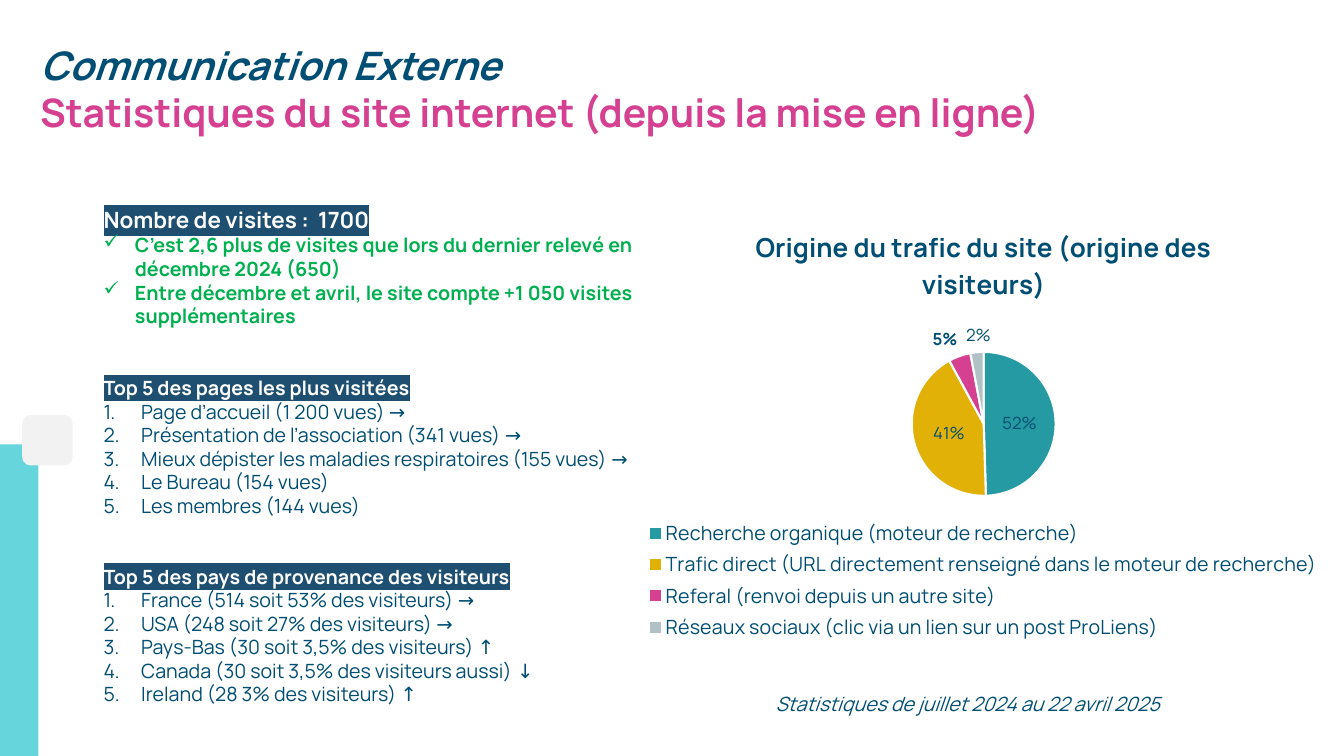
from dataclasses import dataclass

from lxml import etree
from pptx import Presentation
from pptx.chart.data import CategoryChartData
from pptx.dml.color import RGBColor
from pptx.enum.chart import XL_CHART_TYPE, XL_LABEL_POSITION, XL_LEGEND_POSITION
from pptx.enum.shapes import MSO_SHAPE
from pptx.enum.text import MSO_AUTO_SIZE, PP_ALIGN
from pptx.oxml import parse_xml
from pptx.oxml.ns import nsdecls, qn
from pptx.util import Cm, Pt

PIE = XL_CHART_TYPE.PIE
LEGEND_BOTTOM = XL_LEGEND_POSITION.BOTTOM
LABEL_CENTER = XL_LABEL_POSITION.CENTER
LABEL_OUTSIDE = XL_LABEL_POSITION.OUTSIDE_END
ROUNDED = MSO_SHAPE.ROUNDED_RECTANGLE
ONE_ROUND_CORNER = MSO_SHAPE.ROUND_1_RECTANGLE
FIT_SHAPE = MSO_AUTO_SIZE.SHAPE_TO_FIT_TEXT
LEFT, RIGHT, JUSTIFY = PP_ALIGN.LEFT, PP_ALIGN.RIGHT, PP_ALIGN.JUSTIFY


@dataclass(frozen=True)
class Theme:
    navy: str = "004E73"
    pink: str = "D54190"
    green: str = "00B050"
    white: str = "FFFFFF"
    highlight: str = "1E4F71"
    aqua: str = "67D5DC"
    pale: str = "F2F2F2"
    teal: str = "259AA2"
    gold: str = "E1B107"
    silver: str = "B1C2C7"
    text_font: str = "Manrope"
    arrow_font: str = "Karla"
    chart_font: str = "Lato"
    title_size: float = 28
    chart_title_size: float = 18.6
    heading_size: float = 16
    body_size: float = 14
    label_size: float = 12
    chart_size: float = 10


@dataclass(frozen=True)
class Box:
    left: float
    top: float
    width: float
    height: float

    def lengths(self):
        return Cm(self.left), Cm(self.top), Cm(self.width), Cm(self.height)


@dataclass(frozen=True)
class Entry:
    text: str
    arrow: str = ""


@dataclass(frozen=True)
class Block:
    box: Box
    heading: str
    heading_size: float
    entries: tuple
    color: str
    bold: bool
    bullet: str
    indent: float
    alignment: PP_ALIGN


@dataclass(frozen=True)
class Slice:
    name: str
    value: float
    color: str
    position: XL_LABEL_POSITION
    label: str = ""
    label_shift: float = 0


THEME = Theme()
NUMBERED = '<a:buAutoNum {} type="arabicPeriod"/>'.format(nsdecls("a"))
CHECKED = '<a:buChar {} char="✓"/>'.format(nsdecls("a"))

BLOCKS = (
    Block(Box(2.36, 5.08, 13.84, 4.01), "Nombre de visites :  1700", THEME.heading_size, (
        Entry("C’est 2,6 plus de visites que lors du dernier relevé en décembre 2024 (650)"),
        Entry("Entre décembre et avril, le site compte +1 050 visites supplémentaires"),
    ), THEME.green, True, CHECKED, 0.79, JUSTIFY),
    Block(Box(2.36, 9.35, 14.58, 3.84), "Top 5 des pages les plus visitées", THEME.body_size, (
        Entry("Page d’accueil (1 200 vues) ", "→"),
        Entry("Présentation de l’association (341 vues) ", "→"),
        Entry("Mieux dépister les maladies respiratoires (155 vues) ", "→"),
        Entry("Le Bureau (154 vues)"),
        Entry("Les membres (144 vues)"),
    ), THEME.navy, False, NUMBERED, 0.95, LEFT),
    Block(Box(2.36, 14.1, 14.58, 3.84), "Top 5 des pays de provenance des visiteurs", THEME.body_size, (
        Entry("France (514 soit 53% des visiteurs) ", "→"),
        Entry("USA (248 soit 27% des visiteurs) ", "→"),
        Entry("Pays-Bas (30 soit 3,5% des visiteurs) ", "↑"),
        Entry("Canada (30 soit 3,5% des visiteurs aussi)", " ↓"),
        Entry("Ireland (28 3% des visiteurs) ", "↑"),
    ), THEME.navy, False, NUMBERED, 0.95, LEFT),
)

CHART_TITLE = "Origine du trafic du site (origine des visiteurs)"
SLICES = (
    Slice("Recherche organique (moteur de recherche)", 0.5, THEME.teal, LABEL_CENTER, "52%"),
    Slice("Trafic direct (URL directement renseigné dans le moteur de recherche)",
          0.43, THEME.gold, LABEL_CENTER, "41%"),
    Slice("Referal (renvoi depuis un autre site)", 0.05, THEME.pink, LABEL_OUTSIDE),
    Slice("Réseaux sociaux (clic via un lien sur un post ProLiens)",
          0.03, THEME.silver, LABEL_OUTSIDE, "2%", 0.02),
)


def style_font(font, size: float, color: str, bold: bool = False, italic: bool = False,
               name: str = THEME.text_font) -> None:
    font.size = Pt(size)
    font.bold = bold
    font.italic = italic
    font.color.rgb = RGBColor.from_string(color)
    font.name = name


def add_panel(slide, kind: MSO_SHAPE, box: Box, color: str):
    shape = slide.shapes.add_shape(kind, *box.lengths())
    shape.shadow.inherit = False
    shape.fill.solid()
    shape.fill.fore_color.rgb = RGBColor.from_string(color)
    shape.line.fill.background()
    return shape


def add_text_frame(slide, box: Box, lines):
    text_frame = slide.shapes.add_textbox(*box.lengths()).text_frame
    text_frame.word_wrap = True
    text_frame.auto_size = FIT_SHAPE
    text_frame.text = "\n".join(lines)
    return text_frame


def add_block(slide, block: Block) -> None:
    lines = [block.heading, *(entry.text for entry in block.entries)]
    heading, *items = add_text_frame(slide, block.box, lines).paragraphs
    heading.alignment = JUSTIFY
    font = heading.runs[0].font
    style_font(font, block.heading_size, THEME.white, bold=True)
    highlight = etree.Element(qn("a:highlight"))
    etree.SubElement(highlight, qn("a:srgbClr"), val=THEME.highlight)
    font._rPr.find(qn("a:solidFill")).addnext(highlight)
    for paragraph, entry in zip(items, block.entries):
        paragraph.alignment = block.alignment
        properties = paragraph._p.get_or_add_pPr()
        properties.set("marL", str(Cm(block.indent)))
        properties.set("indent", str(-Cm(block.indent)))
        properties.append(parse_xml(block.bullet))
        style_font(paragraph.runs[0].font, THEME.body_size, block.color, block.bold)
        if entry.arrow:
            run = paragraph.add_run()
            run.text = entry.arrow
            style_font(run.font, THEME.body_size, block.color, name=THEME.arrow_font)


def manual_layout(**settings):
    layout = etree.Element(qn("c:layout"))
    manual = etree.SubElement(layout, qn("c:manualLayout"))
    for tag, value in settings.items():
        etree.SubElement(manual, qn(f"c:{tag}"), val=str(value))
    return layout


def place_plot(chart, left: float, top: float, width: float, height: float) -> None:
    plot_area = chart._chartSpace.chart.plotArea
    for existing in plot_area.findall(qn("c:layout")):
        plot_area.remove(existing)
    plot_area.insert(0, manual_layout(layoutTarget="inner", xMode="edge", yMode="edge",
                                      x=left, y=top, w=width, h=height))


def style_slice(series, index: int, part: Slice) -> None:
    point = series.points[index]
    point.format.fill.solid()
    point.format.fill.fore_color.rgb = RGBColor.from_string(part.color)
    point.format.line.color.rgb = RGBColor.from_string(THEME.white)
    point.format.line.width = Pt(1.5)
    if part.label:
        text_frame = point.data_label.text_frame
        text_frame.text = part.label
        style_font(text_frame.paragraphs[0].runs[0].font, THEME.label_size, THEME.navy)
        point.data_label.position = part.position
    if part.label_shift:
        label = series.data_labels._element.findall(qn("c:dLbl"))[-1]
        label.find(qn("c:idx")).addnext(manual_layout(x=part.label_shift, y=0))


def add_traffic_chart(slide, box: Box) -> None:
    data = CategoryChartData(number_format="0%")
    data.categories = [part.name for part in SLICES]
    data.add_series(CHART_TITLE, [part.value for part in SLICES])
    chart = slide.shapes.add_chart(PIE, *box.lengths(), data).chart
    style_font(chart.font, THEME.chart_size, THEME.navy, name=THEME.chart_font)
    title = chart.chart_title.text_frame
    title.text = CHART_TITLE
    style_font(title.paragraphs[0].runs[0].font, THEME.chart_title_size, THEME.navy, bold=True)
    chart.has_legend = True
    chart.legend.position = LEGEND_BOTTOM
    chart.legend.include_in_layout = False
    style_font(chart.legend.font, THEME.body_size, THEME.navy)
    plot = chart.plots[0]
    plot.vary_by_categories = True
    series = plot.series[0]
    labels = series.data_labels
    labels.show_value = True
    labels.number_format = "0%"
    labels.number_format_is_linked = False
    labels.position = LABEL_OUTSIDE
    style_font(labels.font, THEME.label_size, THEME.navy, bold=True)
    for leader_lines in labels._element.findall(qn("c:showLeaderLines")):
        leader_lines.set("val", "0")
    for index, part in enumerate(SLICES):
        style_slice(series, index, part)
    place_plot(chart, 0.4, 0.33, 0.2, 0.33)


def main() -> None:
    presentation = Presentation()
    presentation.slide_width, presentation.slide_height = Cm(33.87), Cm(19.05)
    slide = presentation.slides.add_slide(presentation.slide_layouts[6])
    band = add_panel(slide, ONE_ROUND_CORNER, Box(0, 11.2, 0.97, 7.85), THEME.aqua)
    band.adjustments[0] = 0.37
    add_panel(slide, ROUNDED, Box(0.56, 10.46, 1.27, 1.27), THEME.pale)
    titles = ("Communication Externe", "Statistiques du site internet (depuis la mise en ligne)")
    topic, subject = add_text_frame(slide, Box(0.76, 0.33, 31.19, 3.25), titles).paragraphs
    topic.line_spacing = 1.5
    style_font(topic.runs[0].font, THEME.title_size, THEME.navy, bold=True, italic=True)
    style_font(subject.runs[0].font, THEME.title_size, THEME.pink, bold=True)
    period = add_text_frame(slide, Box(17.81, 17.3, 11.68, 0.86),
                            ["Statistiques de juillet 2024 au 22 avril 2025"]).paragraphs[0]
    period.alignment = RIGHT
    style_font(period.runs[0].font, THEME.body_size, THEME.navy, italic=True)
    for block in BLOCKS:
        add_block(slide, block)
    add_traffic_chart(slide, Box(15.72, 5.23, 18.14, 11.02))
    presentation.save("out.pptx")


if __name__ == "__main__":
    main()
